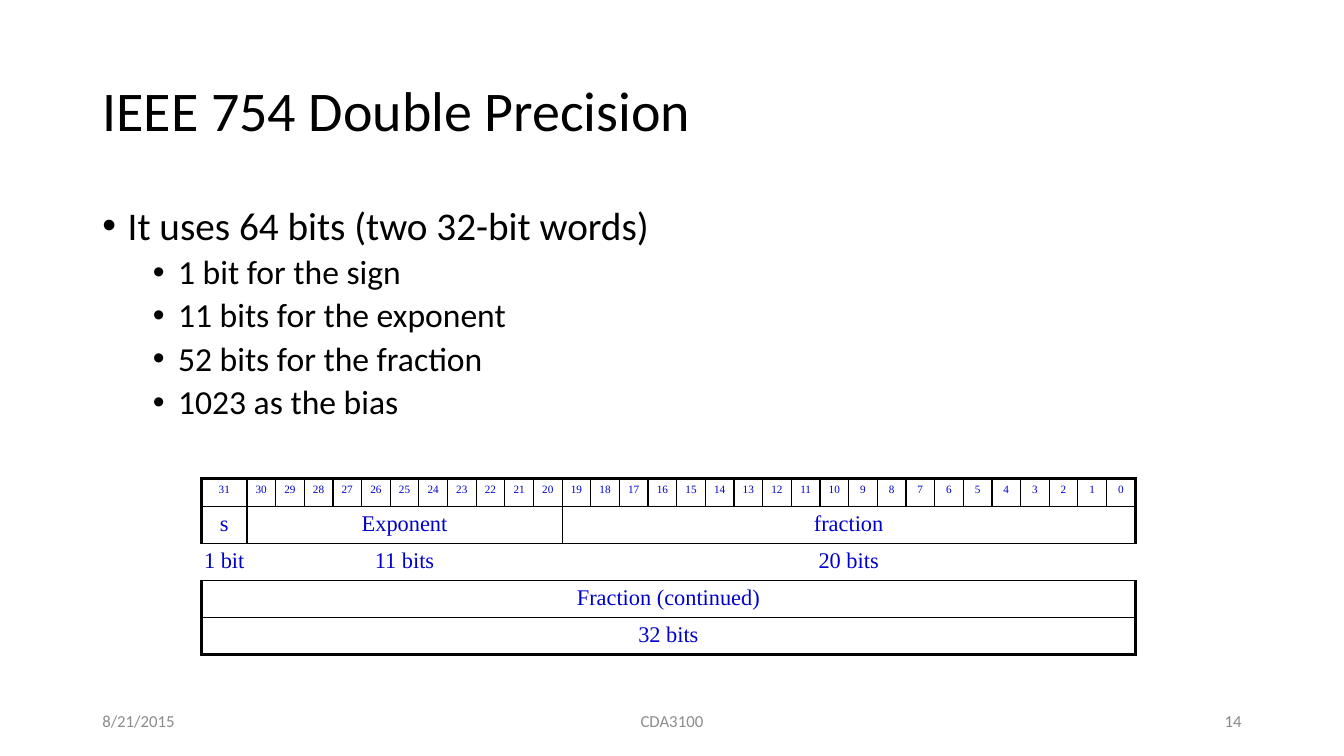
from dataclasses import dataclass

from lxml.etree import SubElement
from pptx import Presentation
from pptx.dml.color import RGBColor
from pptx.enum.text import MSO_ANCHOR, MSO_AUTO_SIZE, PP_ALIGN
from pptx.oxml.ns import qn
from pptx.util import Pt


# Colours, fonts and type sizes
@dataclass(frozen=True)
class Theme:
    ink: str = "000000"
    blue: str = "0000CC"
    gray: str = "8C8C8C"
    page: str = "898989"
    sans: str = "Calibri"
    serif: str = "Times New Roman"
    title: int = 40
    levels: tuple = (28, 24)
    foot: int = 12
    bit: int = 8
    field: int = 16
    thin: float = 1
    thick: float = 2.25
    plain: str = "{2D5ABB26-0587-4C30-8999-92F81FD0307C}"


def write(para, text, *, size, color, font, align=PP_ALIGN.LEFT, space=0, line=1.0):
    para.alignment = align
    para.space_before = Pt(space)
    para.line_spacing = line
    run = para.add_run()
    run.text = text
    run.font.size = Pt(size)
    run.font.name = font
    run.font.bold = False
    run.font.color.rgb = RGBColor.from_string(color)


def bullet(para, left, hang):
    props = para._p.get_or_add_pPr()
    props.set("marL", str(Pt(left)))
    props.set("indent", str(-Pt(hang)))
    SubElement(props, qn("a:buFont"), typeface="Arial")
    SubElement(props, qn("a:buChar"), char="•")


def border(cell, **sides):
    """Give the sides L, R, T and B a width; zero hides a side."""
    props = cell._tc.get_or_add_tcPr()
    for place, side in enumerate("LRTB"):
        width = sides.get(side, 0)
        edge = SubElement(props, qn(f"a:ln{side}"), w=str(Pt(width)))
        props.remove(edge)
        props.insert(place, edge)
        if width:
            fill = SubElement(edge, qn("a:solidFill"))
            SubElement(fill, qn("a:srgbClr"), val=Theme.ink)
        else:
            SubElement(edge, qn("a:noFill"))


class Deck:
    def __init__(self, theme):
        self.theme = theme
        self.file = Presentation()
        self.file.slide_width, self.file.slide_height = Pt(960), Pt(540)
        self.slide = self.file.slides.add_slide(self.file.slide_layouts[1])

    def place(self, shape, left, top, width, height, anchor):
        shape.left, shape.top = Pt(left), Pt(top)
        shape.width, shape.height = Pt(width), Pt(height)
        frame = shape.text_frame
        frame.word_wrap = True
        frame.auto_size = MSO_AUTO_SIZE.NONE
        frame.vertical_anchor = anchor
        return frame

    def title(self, text, *box):
        look = self.theme
        frame = self.place(self.slide.shapes.title, *box, MSO_ANCHOR.MIDDLE)
        write(frame.paragraphs[0], text, size=look.title, color=look.ink,
              font=look.sans, line=0.9)

    def list(self, items, *box):
        look = self.theme
        frame = self.place(self.slide.placeholders[1], *box, MSO_ANCHOR.TOP)
        for index, (level, text) in enumerate(items):
            para = frame.add_paragraph() if index else frame.paragraphs[0]
            para.level = level
            bullet(para, 18 + 36 * level, 18)
            write(para, text, size=look.levels[level], color=look.ink,
                  font=look.sans, space=5 if index else 0, line=0.9)

    def foot(self, text, left, width, align, color):
        box = self.slide.shapes.add_textbox(0, 0, 0, 0)
        frame = self.place(box, left, 500.5, width, 28.75, MSO_ANCHOR.MIDDLE)
        write(frame.paragraphs[0], text, size=self.theme.foot, color=color,
              font=self.theme.sans, align=align)

    def table(self, rows, left, top, widths, heights):
        """Each row lists (text, span) pairs that fill its columns."""
        look = self.theme
        frame = self.slide.shapes.add_table(
            len(rows), len(widths), Pt(left), Pt(top),
            Pt(sum(widths)), Pt(sum(heights)))
        grid = frame.table
        grid.first_row = grid.horz_banding = False
        grid._tbl.tblPr.find(qn("a:tableStyleId")).text = look.plain
        for column, width in zip(grid.columns, widths):
            column.width = Pt(width)
        for row, height in zip(grid.rows, heights):
            row.height = Pt(height)
        for row, fields in enumerate(rows):
            first = 0
            for text, span in fields:
                self.field(grid, row, first, span, text)
                first += span

    def field(self, grid, row, first, span, text):
        look = self.theme
        end = first + span - 1
        head = grid.cell(row, first)
        if span > 1:
            head.merge(grid.cell(row, end))

        # Thick outer frame, thin inner lines, open sides on the width row
        side = 0 if row == WIDTHS else look.thin
        outer = 0 if row == WIDTHS else look.thick
        west = outer if first == 0 else side
        east = outer if end == len(grid.columns) - 1 else side
        north = look.thick if row == 0 else look.thin
        south = look.thick if row == len(grid.rows) - 1 else look.thin
        for col in range(first, end + 1):
            cell = grid.cell(row, col)
            cell.fill.background()
            border(cell, T=north, B=south, L=west if col == first else 0,
                   R=east if col in (first, end) else 0)

        head.margin_left = head.margin_right = Pt(0.75)
        head.margin_top = head.margin_bottom = Pt(3.6)
        write(head.text_frame.paragraphs[0], text, color=look.blue,
              size=look.field if row else look.bit, font=look.serif,
              align=PP_ALIGN.CENTER)


WIDTHS = 2  # row that gives the field widths


def main():
    look = Theme()
    deck = Deck(look)

    # Heading and list
    deck.title("IEEE 754 Double Precision", 66, 28.75, 828, 104.4)
    deck.list([
        (0, "It uses 64 bits (two 32-bit words)"),
        (1, "1 bit for the sign"),
        (1, "11 bits for the exponent"),
        (1, "52 bits for the fraction"),
        (1, "1023 as the bias"),
    ], 66, 143.75, 828, 342.6)

    # Bit layout of the two words
    deck.table([
        [(str(bit), 1) for bit in range(31, -1, -1)],
        [("s", 1), ("Exponent", 11), ("fraction", 20)],
        [("1 bit", 1), ("11 bits", 11), ("20 bits", 20)],
        [("Fraction (continued)", 32)],
        [("32 bits", 32)],
    ], 144, 342, [32.4] + [20.48] * 31, [19.6] + [26.5] * 4)

    # Footer
    deck.foot("8/21/2015", 66, 216, PP_ALIGN.LEFT, look.gray)
    deck.foot("CDA3100", 318, 324, PP_ALIGN.CENTER, look.gray)
    deck.foot("14", 678, 216, PP_ALIGN.RIGHT, look.page)

    deck.file.save("out.pptx")


if __name__ == "__main__":
    main()
